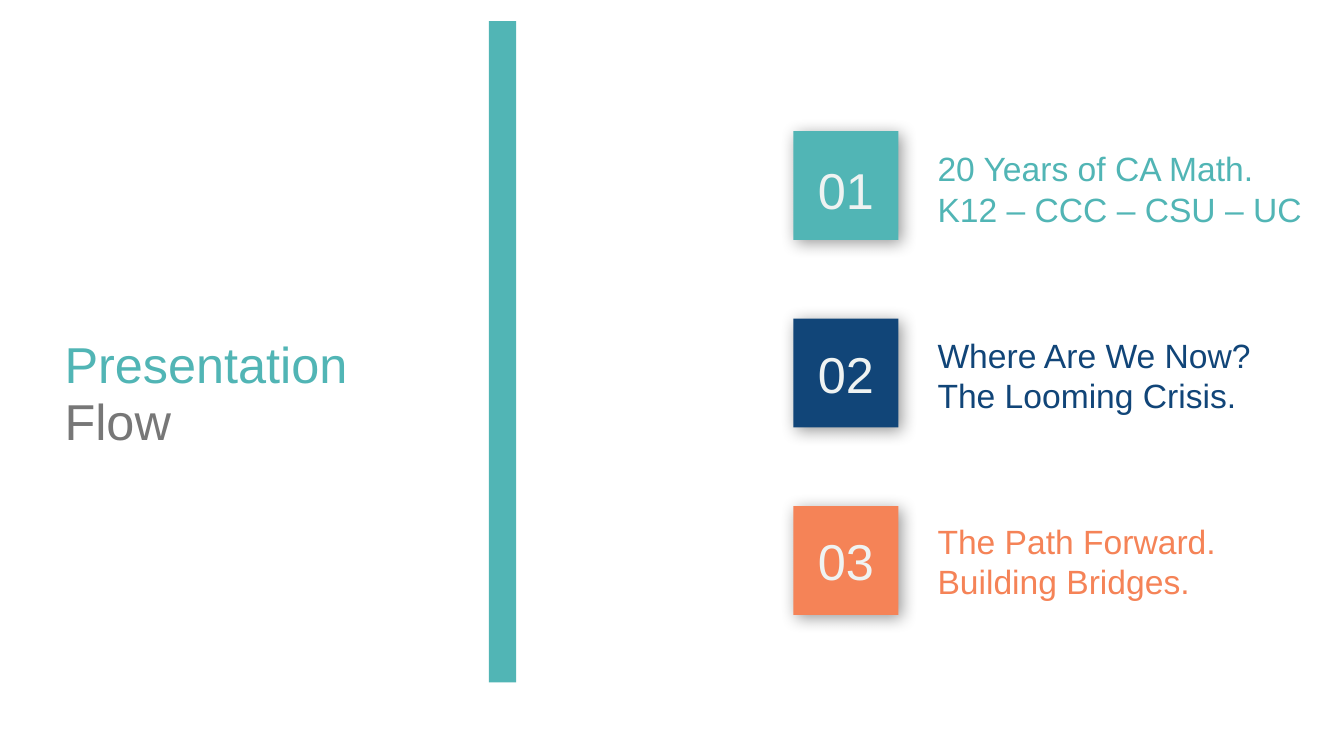
from lxml.etree import SubElement
from pptx import Presentation
from pptx.dml.color import RGBColor
from pptx.enum.shapes import MSO_SHAPE
from pptx.enum.text import MSO_ANCHOR, PP_ALIGN
from pptx.oxml.ns import qn
from pptx.util import Pt

EMU_PER_PX = 9144
FONT = "Arial"
TEAL, NAVY, CORAL, GRAY, PALE = "51B5B5", "114578", "F58357", "777777", "EFF3F2"
TOPICS = [
    (TEAL, ["20 Years of CA Math.", "K12 – CCC – CSU – UC"], 7),
    (NAVY, ["Where Are We Now?", "The Looming Crisis."], 0),
    (CORAL, ["The Path Forward.", "Building Bridges."], 0),
]


def px(*lengths):
    """Turn pixel lengths into EMU."""
    return [length * EMU_PER_PX for length in lengths]


def color(code):
    """Turn a hex string into a color."""
    return RGBColor.from_string(code)


def write(frame, lines, size, colors, align=PP_ALIGN.LEFT):
    """Write one formatted paragraph per line."""
    frame.word_wrap = True
    frame.text = "\n".join(lines)
    for para, code in zip(frame.paragraphs, colors):
        para.alignment = align
        para.font.name = FONT
        para.font.size = Pt(size)
        para.font.color.rgb = color(code)


def add_block(page, bounds, fill):
    """Add a plain filled rectangle."""
    block = page.shapes.add_shape(MSO_SHAPE.RECTANGLE, *px(*bounds))
    block.shadow.inherit = False
    block.fill.solid()
    block.fill.fore_color.rgb = color(fill)
    block.line.fill.background()
    return block


def add_soft_shadow(block):
    """Give a block a soft shadow to the lower right."""
    effects = block.element.spPr.find(qn("a:effectLst"))
    shadow = SubElement(effects, qn("a:outerShdw"), blurRad=str(Pt(12)),
                        dist=str(Pt(3)), dir="2700000", algn="tl", rotWithShape="0")
    tint = SubElement(shadow, qn("a:srgbClr"), val="000000")
    SubElement(tint, qn("a:alpha"), val="40000")


def add_number_tile(page, top, number, fill, top_inset):
    """Add a shadowed square holding a two-digit number."""
    tile = add_block(page, (787, top, 104, 108), fill)
    add_soft_shadow(tile)
    frame = tile.text_frame
    frame.vertical_anchor = MSO_ANCHOR.MIDDLE
    frame.margin_top, frame.margin_bottom = px(top_inset, 0)
    write(frame, [f"{number:02}"], 36, [PALE], PP_ALIGN.CENTER)


def add_caption(page, top, lines, code):
    """Add the text beside a number tile."""
    box = page.shapes.add_textbox(*px(920, top, 382, 91))
    write(box.text_frame, lines, 24, [code] * len(lines))


def set_title(page):
    """Place the two-color title."""
    title = page.shapes.title
    title.left, title.top, title.width, title.height = px(54, 330, 418, 122)
    title.text_frame.vertical_anchor = MSO_ANCHOR.TOP
    write(title.text_frame, ["Presentation", "Flow"], 36, [TEAL, GRAY])
    for para in title.text_frame.paragraphs:
        para.line_spacing = 0.94


def main():
    """Build and save the deck."""
    deck = Presentation()
    deck.slide_width, deck.slide_height = px(1333, 750)
    page = deck.slides.add_slide(deck.slide_layouts[5])
    set_title(page)
    add_block(page, (485, 21, 27, 656), TEAL)
    for index, (code, lines, top_inset) in enumerate(TOPICS):
        add_number_tile(page, 130 + 186 * index, index + 1, code, top_inset)
        add_caption(page, 142 + 185 * index, lines, code)
    deck.save("out.pptx")


if __name__ == "__main__":
    main()
